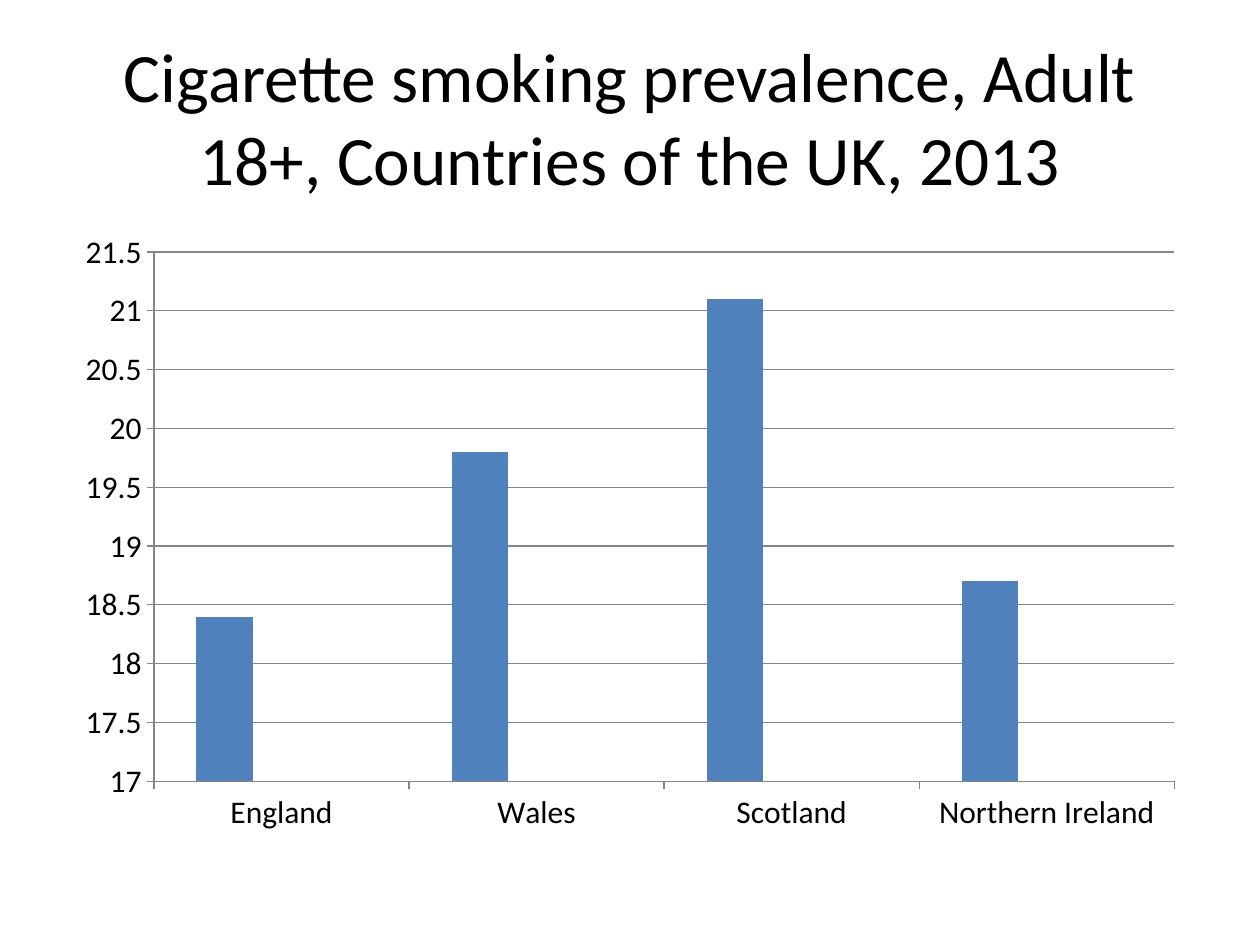
import dataclasses

import pptx
import pptx.chart.data
import pptx.dml.color
import pptx.enum.chart
import pptx.enum.text
import pptx.util

FONT = "Calibri"
BLACK = "000000"
AXIS_GREY = "868686"
COUNTRIES = ("England", "Wales", "Scotland", "Northern Ireland")
TITLE_ONLY_LAYOUT = 5


@dataclasses.dataclass(frozen=True)
class Area:
    """A box given as shares of the slide's width and height."""
    left: float
    top: float
    width: float
    height: float

    def lengths(self, deck) -> tuple:
        across, down = deck.slide_width, deck.slide_height
        return (int(self.left * across), int(self.top * down),
                int(self.width * across), int(self.height * down))


@dataclasses.dataclass(frozen=True)
class Series:
    name: str
    values: tuple
    color: str


TITLE_AREA = Area(0.05, 0.04, 0.9, 1 / 6)
CHART_AREA = Area(0.05, 1.75 / 7.5, 0.9, 0.66)
NO_VALUES = (None,) * len(COUNTRIES)
PREVALENCE = (
    Series("Series 1", (18.4, 19.8, 21.1, 18.7), "4F81BD"),
    Series("Series 2", NO_VALUES, "C0504D"),
    Series("Series 3", NO_VALUES, "9BBB59"),
)


def rgb(color: str) -> pptx.dml.color.RGBColor:
    return pptx.dml.color.RGBColor.from_string(color)


def set_font(font, size: float) -> None:
    font.name = FONT
    font.size = pptx.util.Pt(size)
    font.color.rgb = rgb(BLACK)


def set_line(line) -> None:
    line.color.rgb = rgb(AXIS_GREY)
    line.width = pptx.util.Pt(0.75)


def write_title(deck, slide, wording: str) -> None:
    title = slide.shapes.title
    title.left, title.top, title.width, title.height = TITLE_AREA.lengths(deck)
    frame = title.text_frame
    frame.word_wrap = True
    frame.auto_size = pptx.enum.text.MSO_AUTO_SIZE.NONE
    frame.vertical_anchor = pptx.enum.text.MSO_ANCHOR.MIDDLE
    paragraph = frame.paragraphs[0]
    paragraph.alignment = pptx.enum.text.PP_ALIGN.CENTER
    run = paragraph.add_run()
    run.text = wording
    set_font(run.font, 39.6)


def draw_prevalence_chart(deck, slide) -> None:
    chart_data = pptx.chart.data.CategoryChartData()
    chart_data.categories = COUNTRIES
    for series in PREVALENCE:
        chart_data.add_series(series.name, series.values)
    chart = slide.shapes.add_chart(
        pptx.enum.chart.XL_CHART_TYPE.COLUMN_CLUSTERED,
        *CHART_AREA.lengths(deck), chart_data).chart
    chart.has_title = False
    chart.has_legend = False
    set_font(chart.font, 18)

    columns = chart.plots[0]
    columns.gap_width = 150
    columns.overlap = 0
    columns.vary_by_categories = False
    for drawn, series in zip(columns.series, PREVALENCE):
        drawn.format.fill.solid()
        drawn.format.fill.fore_color.rgb = rgb(series.color)
        drawn.invert_if_negative = False

    for axis in (chart.category_axis, chart.value_axis):
        axis.major_tick_mark = pptx.enum.chart.XL_TICK_MARK.OUTSIDE
        axis.minor_tick_mark = pptx.enum.chart.XL_TICK_MARK.NONE
        set_line(axis.format.line)
    scale = chart.value_axis
    scale.minimum_scale, scale.maximum_scale, scale.major_unit = 17, 21.5, 0.5
    scale.has_major_gridlines = True
    set_line(scale.major_gridlines.format.line)


def main() -> None:
    deck = pptx.Presentation()
    deck.slide_width = pptx.util.Inches(10)
    deck.slide_height = pptx.util.Inches(7.5)
    slide = deck.slides.add_slide(deck.slide_layouts[TITLE_ONLY_LAYOUT])
    write_title(deck, slide,
                "Cigarette smoking prevalence, Adult 18+, Countries of the UK, 2013")
    draw_prevalence_chart(deck, slide)
    deck.save("out.pptx")


if __name__ == "__main__":
    main()
